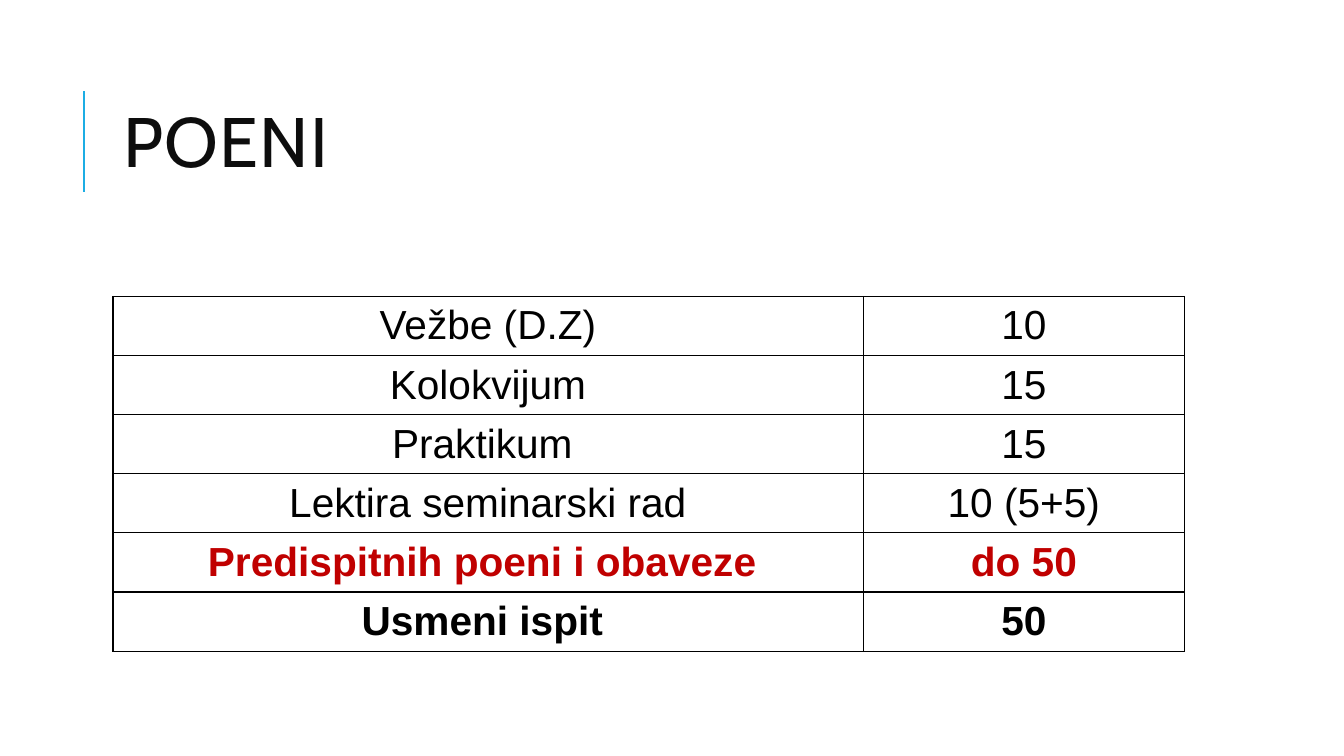
from pptx import Presentation
from pptx.dml.color import RGBColor
from pptx.enum.shapes import MSO_CONNECTOR as Connector
from pptx.enum.text import MSO_ANCHOR as Anchor, PP_ALIGN as Align
from pptx.oxml import parse_xml
from pptx.oxml.ns import nsdecls
from pptx.util import Inches, Pt

BLACK = RGBColor(0x00, 0x00, 0x00)
INK = RGBColor(0x0D, 0x0D, 0x0D)
RED = RGBColor(0xC0, 0x00, 0x00)
BLUE = RGBColor(0x1C, 0xAD, 0xE4)

POINTS = [
    ("Vežbe (D.Z)", "10", {}),
    ("Kolokvijum", "15", {}),
    ("Praktikum ", "15", {}),
    ("Lektira seminarski rad", "10 (5+5)", {}),
    ("Predispitnih poeni i obaveze ", "do 50", {"bold": True, "color": RED}),
    ("Usmeni ispit ", "50", {"bold": True}),
]
COLUMN_SHARES = (0.7, 0.3)


def write(frame, text, font="Arial", size=29, color=BLACK, bold=False,
          align=Align.CENTER, line_spacing=1.15, space_after=10, tracking=0):
    para = frame.paragraphs[0]
    para.alignment = align
    para.line_spacing = line_spacing
    para.space_before = Pt(0)
    para.space_after = Pt(space_after)
    span = para.add_run()
    span.text = text
    span.font.name = font
    span.font.size = Pt(size)
    span.font.bold = bold
    span.font.color.rgb = color
    if tracking:
        span.font._element.set("spc", str(tracking * 100))


def border_cell(cell, color=BLACK, width=1):
    properties = cell._tc.get_or_add_tcPr()
    for index, side in enumerate(("lnL", "lnR", "lnT", "lnB")):
        properties.insert(index, parse_xml(
            f'<a:{side} {nsdecls("a")} w="{Pt(width)}"><a:solidFill>'
            f'<a:srgbClr val="{color}"/></a:solidFill></a:{side}>'))


def add_heading(page, text, left, top, width, height):
    rule_left = left - Inches(0.29)
    rule_top = top + Inches(0.26)
    rule = page.shapes.add_connector(
        Connector.STRAIGHT, rule_left, rule_top + Inches(1), rule_left, rule_top)
    rule.line.color.rgb = BLUE
    rule.line.width = Pt(1.5)
    rule._element.spPr.append(parse_xml(f'<a:effectLst {nsdecls("a")}/>'))

    title = page.shapes.title
    title.left, title.top, title.width, title.height = left, top, width, height
    frame = title.text_frame
    frame.word_wrap = True
    frame.vertical_anchor = Anchor.MIDDLE
    write(frame, text, font="Cabin", size=50, color=INK, align=Align.LEFT,
          line_spacing=0.8, space_after=0, tracking=1)


def add_points_table(page, left, top, width, height):
    table = page.shapes.add_table(
        len(POINTS), len(COLUMN_SHARES), left, top, width, height).table
    table.first_row = False
    table.horz_banding = False
    for column, share in zip(table.columns, COLUMN_SHARES):
        column.width = int(width * share)
    for row, (activity, points, style) in zip(table.rows, POINTS):
        row.height = height // len(POINTS)
        for cell, text in zip(row.cells, (activity, points)):
            cell.margin_left = cell.margin_right = Inches(0.12)
            cell.margin_top = cell.margin_bottom = 0
            cell.fill.background()
            border_cell(cell)
            write(cell.text_frame, text, **style)


def main():
    deck = Presentation()
    deck.slide_width = Inches(13.33)
    deck.slide_height = Inches(7.5)
    page = deck.slides.add_slide(deck.slide_layouts[5])
    left, width = Inches(1.12), Inches(10.63)
    add_heading(page, "POENI", left, Inches(0.64), width, Inches(1.64))
    add_points_table(page, left, Inches(2.94), width, Inches(3.52))
    deck.save("out.pptx")


if __name__ == "__main__":
    main()
